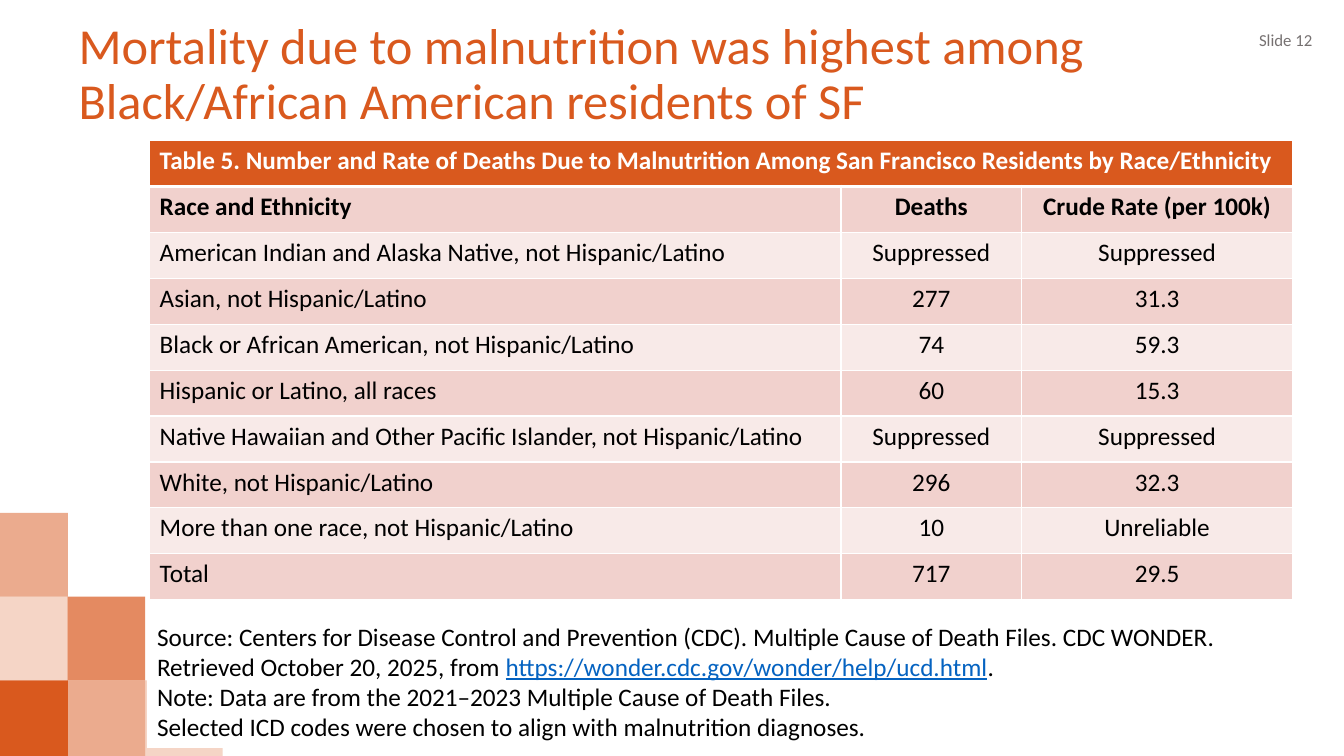
from dataclasses import dataclass

from lxml.etree import SubElement
from pptx import Presentation
from pptx.dml.color import RGBColor
from pptx.enum.shapes import MSO_SHAPE as Shape
from pptx.enum.text import MSO_ANCHOR as Anchor, PP_ALIGN as Align
from pptx.oxml.ns import qn
from pptx.util import Pt

ORANGE = RGBColor(0xD9, 0x59, 0x1E)
ROSE = RGBColor(0xF1, 0xD1, 0xCD)
BLUSH = RGBColor(0xF8, 0xEA, 0xE8)
WHITE = RGBColor(0xFF, 0xFF, 0xFF)
BLACK = RGBColor(0, 0, 0)
GREY = RGBColor(0x76, 0x71, 0x71)
BLUE = RGBColor(0x05, 0x63, 0xC1)
FONT = "Calibri"


@dataclass(frozen=True)
class Tile:
    col: int
    row: int
    alpha: int


@dataclass(frozen=True)
class Link:
    text: str


TILES = [
    Tile(0, 2, 100), Tile(1, 2, 50), Tile(0, 1, 25),
    Tile(1, 1, 70), Tile(2, 2, 25), Tile(0, 0, 50),
]
TILE_W, TILE_H = 55.4, 59.8
STEP_X, STEP_Y = 55.2, 59.8
TILE_X, TILE_Y = -6.8, 366.4

TITLE = "Mortality due to malnutrition was highest among Black/African American residents of SF"
HEAD = ("Table 5. Number and Rate of Deaths Due to Malnutrition "
        "Among San Francisco Residents by Race/Ethnicity")
ROWS = [
    (HEAD, "", ""),
    ("Race and Ethnicity", "Deaths", "Crude Rate (per 100k)"),
    ("American Indian and Alaska Native, not Hispanic/Latino", "Suppressed", "Suppressed"),
    ("Asian, not Hispanic/Latino", "277", "31.3"),
    ("Black or African American, not Hispanic/Latino", "74", "59.3"),
    ("Hispanic or Latino, all races", "60", "15.3"),
    ("Native Hawaiian and Other Pacific Islander, not Hispanic/Latino", "Suppressed", "Suppressed"),
    ("White, not Hispanic/Latino", "296", "32.3"),
    ("More than one race, not Hispanic/Latino", "10", "Unreliable"),
    ("Total", "717", "29.5"),
]
WIDTHS = (493.9, 128.9, 193.7)
ROW_H = 32.8
NOTES = [
    ["Source: Centers for Disease Control and Prevention (CDC). Multiple Cause of Death Files. "
     "CDC WONDER. Retrieved October 20, 2025, from ",
     Link("https://wonder.cdc.gov/wonder/help/ucd.html"), "."],
    ["Note: Data are from the 2021–2023 Multiple Cause of Death Files."],
    ["Selected ICD codes were chosen to align with malnutrition diagnoses."],
]


def write(frame, paras: list, *, size: float = 18, color: RGBColor = BLACK,
          bold: bool = False, align: Align = Align.LEFT, space: float = 1) -> None:
    frame.word_wrap = True
    for num, parts in enumerate(paras):
        para = frame.add_paragraph() if num else frame.paragraphs[0]
        para.alignment = align
        para.line_spacing = space
        for part in parts:
            link = isinstance(part, Link)
            run = para.add_run()
            run.text = part.text if link else part
            font = run.font
            font.name, font.size, font.bold = FONT, Pt(size), bold
            font.color.rgb = BLUE if link else color
            font.underline = link


def box(slide, x: float, y: float, w: float, h: float):
    frame = slide.shapes.add_textbox(Pt(x), Pt(y), Pt(w), Pt(h)).text_frame
    frame.vertical_anchor = Anchor.MIDDLE
    return frame


def block(slide, x: float, y: float, w: float, h: float, fill: RGBColor):
    shape = slide.shapes.add_shape(Shape.RECTANGLE, Pt(x), Pt(y), Pt(w), Pt(h))
    shape.shadow.inherit = False
    shape.fill.solid()
    shape.fill.fore_color.rgb = fill
    shape.line.fill.background()
    return shape


def draw_tile(slide, tile: Tile) -> None:
    shape = block(slide, TILE_X + tile.col * STEP_X, TILE_Y + tile.row * STEP_Y,
                  TILE_W, TILE_H, ORANGE)
    if tile.alpha < 100:
        color = shape.element.spPr.find(".//" + qn("a:srgbClr"))
        SubElement(color, qn("a:alpha"), val=str(tile.alpha * 1000))


def edge(cell, row: int) -> None:
    props = cell._tc.get_or_add_tcPr()
    thick = {"T": 3 if row == 1 else 1, "B": 3 if row == 0 else 1}
    for side in "LRTB":
        line = SubElement(props, qn(f"a:ln{side}"), w=str(Pt(thick.get(side, 1))))
        fill = SubElement(line, qn("a:solidFill"))
        SubElement(fill, qn("a:srgbClr"), val=str(WHITE))


def draw_table(slide) -> None:
    table = slide.shapes.add_table(len(ROWS), len(WIDTHS), Pt(106.9), Pt(100.4),
                                   Pt(sum(WIDTHS)), Pt(ROW_H * len(ROWS))).table
    for col, width in zip(table.columns, WIDTHS):
        col.width = Pt(width)
    table.cell(0, 0).merge(table.cell(0, len(WIDTHS) - 1))
    for r, texts in enumerate(ROWS):
        table.rows[r].height = Pt(ROW_H)
        for c, text in enumerate(texts):
            cell = table.cell(r, c)
            edge(cell, r)
            cell.fill.solid()
            cell.fill.fore_color.rgb = ORANGE if r == 0 else ROSE if r % 2 else BLUSH
            if text:
                write(cell.text_frame, [[text]], color=WHITE if r == 0 else BLACK,
                      bold=r < 2, align=Align.CENTER if c else Align.LEFT)


def main() -> None:
    deck = Presentation()
    deck.slide_width, deck.slide_height = Pt(960), Pt(540)
    slide = deck.slides.add_slide(deck.slide_layouts[6])
    for tile in TILES:
        draw_tile(slide, tile)
    write(box(slide, 728.6, 14.4, 216, 28.8), [["Slide 12"]],
          size=12, color=GREY, align=Align.RIGHT)
    write(box(slide, 49, 0.7, 862.6, 106.6), [[TITLE]],
          size=36, color=ORANGE, space=0.9)
    draw_table(slide)
    notes = block(slide, 105.1, 439.9, 839.5, 94.3, WHITE).text_frame
    notes.vertical_anchor = Anchor.TOP
    write(notes, NOTES)
    deck.save("out.pptx")


if __name__ == "__main__":
    main()
